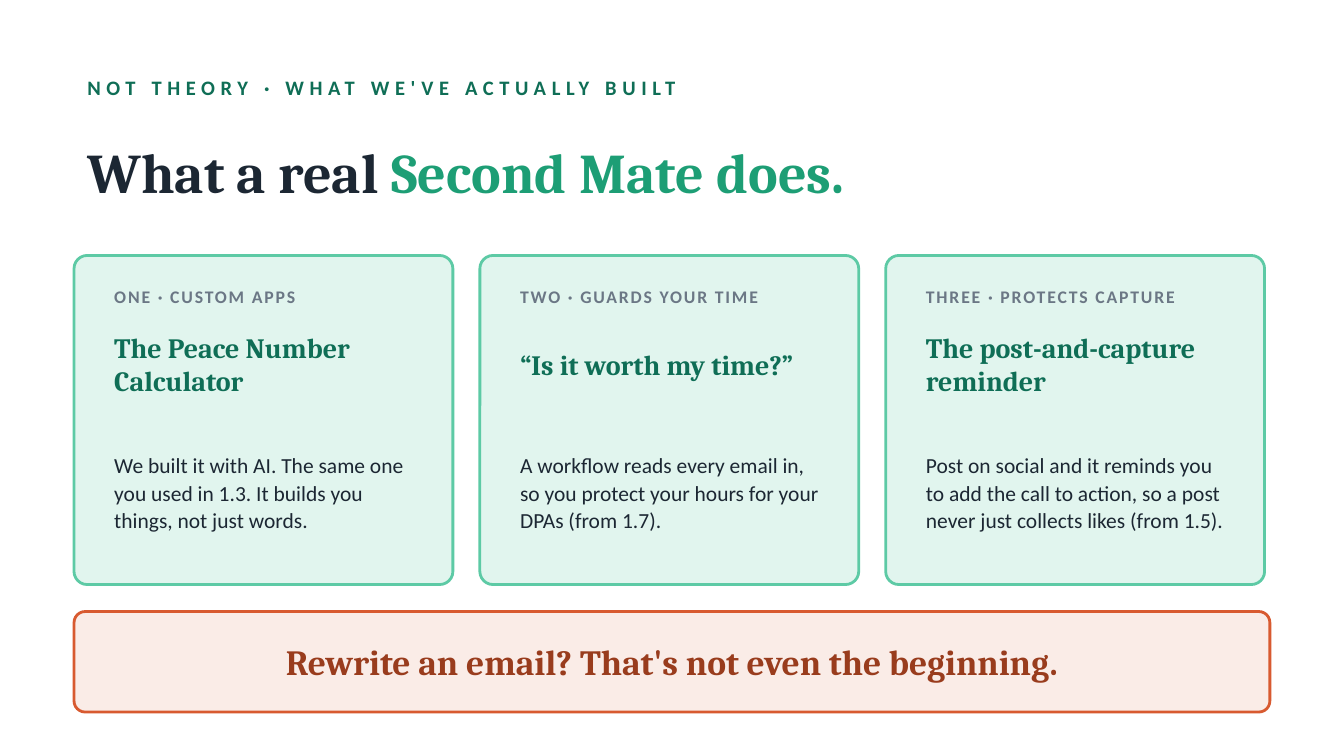
import pptx
import pptx.util
import pptx.dml.color
import pptx.enum.shapes
import pptx.enum.text

Cm = pptx.util.Cm
Pt = pptx.util.Pt
Align = pptx.enum.text.PP_ALIGN

GREEN = "0F6E56"
INK = "1C2733"
LEFT, WIDE = 1.4, 22.6
TOP, STEP = 4.83, 7.67
CARDS = [
    ("ONE · CUSTOM APPS", "The Peace Number Calculator",
     "We built it with AI. The same one you used in 1.3. "
     "It builds you things, not just words."),
    ("TWO · GUARDS YOUR TIME", "“Is it worth my time?”",
     "A workflow reads every email in, so you protect your hours "
     "for your DPAs (from 1.7)."),
    ("THREE · PROTECTS CAPTURE", "The post-and-capture reminder",
     "Post on social and it reminds you to add the call to action, "
     "so a post never just collects likes (from 1.5)."),
]


def color(code):
    return pptx.dml.color.RGBColor.from_string(code)


class Page:
    head = "Cambria"
    body = "Calibri"

    def __init__(self, slide):
        self.slide = slide

    def style(self, run, font, size, tint, bold=True, track=0):
        run.font.name = font
        run.font.size = Pt(size)
        run.font.bold = bold
        run.font.color.rgb = color(tint)
        if track:
            run._r.get_or_add_rPr().set("spc", str(track * 100))

    def frame(self, shape):
        frame = shape.text_frame
        frame.word_wrap = True
        frame.auto_size = pptx.enum.text.MSO_AUTO_SIZE.NONE
        frame.vertical_anchor = pptx.enum.text.MSO_ANCHOR.MIDDLE
        return frame

    def title(self, parts, x, y, w, h):
        shape = self.slide.shapes.title
        shape.left, shape.top = Cm(x), Cm(y)
        shape.width, shape.height = Cm(w), Cm(h)
        para = self.frame(shape).paragraphs[0]
        para.alignment = Align.LEFT
        for words, tint in parts:
            run = para.add_run()
            run.text = words
            self.style(run, self.head, 30, tint)

    def text(self, words, x, y, w, h, font, size, tint,
             bold=True, track=0, align=Align.LEFT, lead=None):
        box = self.slide.shapes.add_textbox(Cm(x), Cm(y), Cm(w), Cm(h))
        para = self.frame(box).paragraphs[0]
        para.text = words
        para.alignment = align
        para.line_spacing = lead
        self.style(para.runs[0], font, size, tint, bold, track)

    def panel(self, x, y, w, h, fill, line, round_by):
        kind = pptx.enum.shapes.MSO_SHAPE.ROUNDED_RECTANGLE
        shape = self.slide.shapes.add_shape(kind, Cm(x), Cm(y), Cm(w), Cm(h))
        shape.adjustments[0] = round_by
        shape.shadow.inherit = False
        shape.fill.solid()
        shape.fill.fore_color.rgb = color(fill)
        shape.line.color.rgb = color(line)
        shape.line.width = Pt(1.5)

    def card(self, x, label, name, note):
        self.panel(x, TOP, 7.16, 6.22, "E1F5EE", "5DCAA5", 0.04)
        x, w = x + 0.51, 6.22
        self.text(label, x, TOP + 0.4, w, 0.76, self.body, 9.5, "6B7785", track=1)
        self.text(name, x, TOP + 1.16, w, 1.78, self.head, 15, GREEN)
        self.text(note, x, TOP + 3, w, 2.92, self.body, 11.5, INK,
                  bold=False, lead=1.08)


def main():
    deck = pptx.Presentation()
    deck.slide_width, deck.slide_height = Cm(25.4), Cm(14.29)
    page = Page(deck.slides.add_slide(deck.slide_layouts[5]))
    page.text("NOT THEORY · WHAT WE'VE ACTUALLY BUILT", LEFT, 1.27, WIDE, 0.76,
              page.body, 11, GREEN, track=3)
    page.title([("What a real ", INK), ("Second Mate does.", "1D9E75")],
               LEFT, 2.16, WIDE, 2.16)
    for i, card in enumerate(CARDS):
        page.card(LEFT + i * STEP, *card)
    page.panel(LEFT, 11.56, WIDE, 1.9, "FAECE7", "D85A30", 0.11)
    page.text("Rewrite an email? That's not even the beginning.",
              LEFT, 11.56, WIDE, 1.9, page.head, 19, "993C1D", align=Align.CENTER)
    deck.save("out.pptx")


if __name__ == "__main__":
    main()
